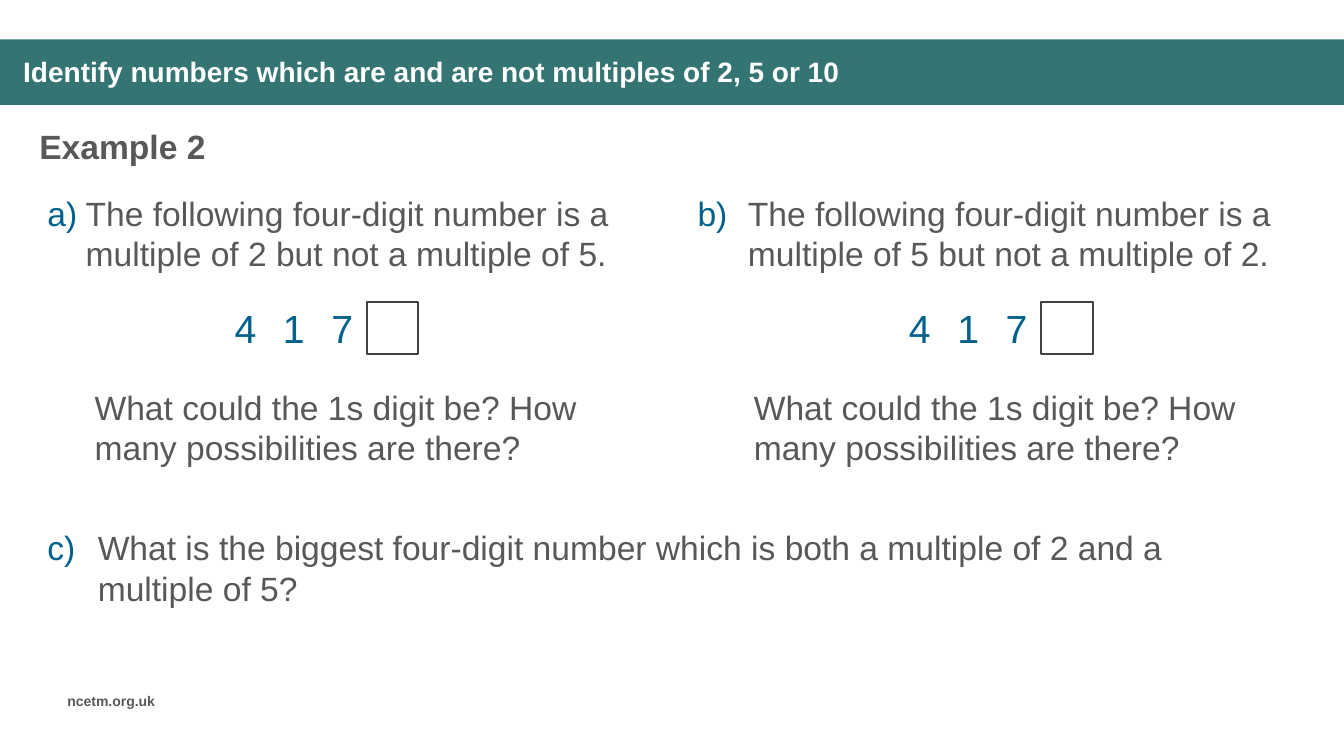
from dataclasses import dataclass

from lxml import etree
from pptx import Presentation
from pptx import util as u
from pptx.dml.color import RGBColor
from pptx.enum import shapes, text
from pptx.oxml import ns


@dataclass(frozen=True)
class Theme:
    """Colours, font and type sizes."""
    font: str = "Arial"
    teal: str = "347574"
    white: str = "FFFFFF"
    grey: str = "585858"
    blue: str = "00628C"
    edge: str = "414141"
    foot: int = 10
    title: int = 20
    body: int = 24
    digit: int = 28


def color(code):
    """Return an RGB colour from its hex code."""
    return RGBColor.from_string(code)


def number(par, start, indent, ink):
    """Give a paragraph a coloured letter and a hanging indent."""
    props = par._p.get_or_add_pPr()
    props.set("marL", str(u.Pt(indent)))
    props.set("indent", str(-u.Pt(indent)))
    tint = etree.SubElement(props, ns.qn("a:buClr"))
    etree.SubElement(tint, ns.qn("a:srgbClr"), val=ink)
    etree.SubElement(props, ns.qn("a:buAutoNum"),
                     type="alphaLcParenR", startAt=str(start))


def write(shape, words, font, size, ink, bold=False, anchor="TOP",
          align="LEFT", start=None, indent=0, mark=None, lead=1):
    """Put formatted text in a shape."""
    frame = shape.text_frame
    frame.word_wrap = True
    frame.auto_size = text.MSO_AUTO_SIZE.NONE
    frame.vertical_anchor = text.MSO_ANCHOR[anchor]
    par = frame.paragraphs[0]
    if start:
        number(par, start, indent, mark)
    par.alignment = text.PP_ALIGN[align]
    par.line_spacing = lead
    par.space_before = u.Pt(0)
    run = par.add_run()
    run.text = words
    run.font.name = font
    run.font.size = u.Pt(size)
    run.font.bold = bold
    run.font.color.rgb = color(ink)


class Page:
    """Hold the theme and the current slide."""

    def __init__(self, theme, slide):
        """Keep the theme and the slide."""
        self.theme = theme
        self.slide = slide

    def rect(self, box, fill=None, line=None, group=None):
        """Draw a plain rectangle."""
        home = group or self.slide
        item = home.shapes.add_shape(shapes.MSO_SHAPE.RECTANGLE, *map(u.Pt, box))
        item.shadow.inherit = False
        if fill:
            item.fill.solid()
            item.fill.fore_color.rgb = color(fill)
        else:
            item.fill.background()
        if line:
            item.line.color.rgb = color(line)
            item.line.width = u.Pt(1.5)
        else:
            item.line.fill.background()
        return item

    def band(self, box):
        """Draw the title band behind everything else."""
        item = self.rect(box, fill=self.theme.teal).element
        item.getparent().insert(2, item)

    def label(self, words, box, group=None, **style):
        """Add a text box."""
        home = group or self.slide
        item = home.shapes.add_textbox(*map(u.Pt, box))
        write(item, words, self.theme.font, **style)

    def holder(self, index, words, box, **style):
        """Move and fill a layout placeholder."""
        item = next(h for h in self.slide.placeholders
                    if h.placeholder_format.idx == index)
        item.left, item.top, item.width, item.height = map(u.Pt, box)
        write(item, words, self.theme.font, **style)

    def task(self, index, words, box, start, indent):
        """Add a lettered question."""
        look = self.theme
        self.holder(index, words, box, size=look.body, ink=look.grey,
                    start=start, indent=indent, mark=look.blue)

    def digits(self, left, top, digits):
        """Add a grouped row of digits with an empty box at its end."""
        look = self.theme
        side, step = 36.72, 34.56
        group = self.slide.shapes.add_group_shape()
        for i, digit in enumerate(digits):
            self.label(digit, (left + i * step, top, side, side), group,
                       size=look.digit, ink=look.blue,
                       anchor="MIDDLE", align="CENTER")
        self.rect((left + 105.12, top, side, side), line=look.edge, group=group)


def main():
    """Build and save the slide."""
    deck = Presentation()
    deck.slide_width, deck.slide_height = u.Pt(960), u.Pt(540)
    look = Theme()
    page = Page(look, deck.slides.add_slide(deck.slide_layouts.get_by_name("Comparison")))

    page.band((0, 28.08, 960, 46.8))
    page.holder(0, "Identify numbers which are and are not multiples of 2, 5 or 10",
                (9.36, 35.28, 833.76, 33.84), size=look.title, ink=look.white,
                bold=True, anchor="MIDDLE", lead=0.9)
    page.holder(1, "Example 2", (20.88, 86.4, 479.52, 36),
                size=look.body, ink=look.grey, bold=True)

    parts = [(2, 26.64, 27.36, 60.48, 156.96, 2, 5),
             (4, 491.04, 36, 531.36, 638.64, 5, 2)]
    for start, (index, left, indent, ask, row, yes, no) in enumerate(parts, 1):
        page.task(index, "The following four-digit number is a multiple of "
                  f"{yes} but not a multiple of {no}.",
                  (left, 133.92, 436.32, 65.52), start, indent)
        page.digits(row, 216, "417")
        page.label("What could the 1s digit be? How many possibilities are there?",
                   (ask, 272.88, 368.64, 65.52), size=look.body, ink=look.grey)

    page.task(3, "What is the biggest four-digit number which is both "
              "a multiple of 2 and a multiple of 5?",
              (26.64, 372.96, 822.24, 65.52), 3, 36)
    page.label("ncetm.org.uk", (41.04, 491.04, 87.12, 19.44),
               size=look.foot, ink=look.grey, bold=True)
    deck.save("out.pptx")


if __name__ == "__main__":
    main()
